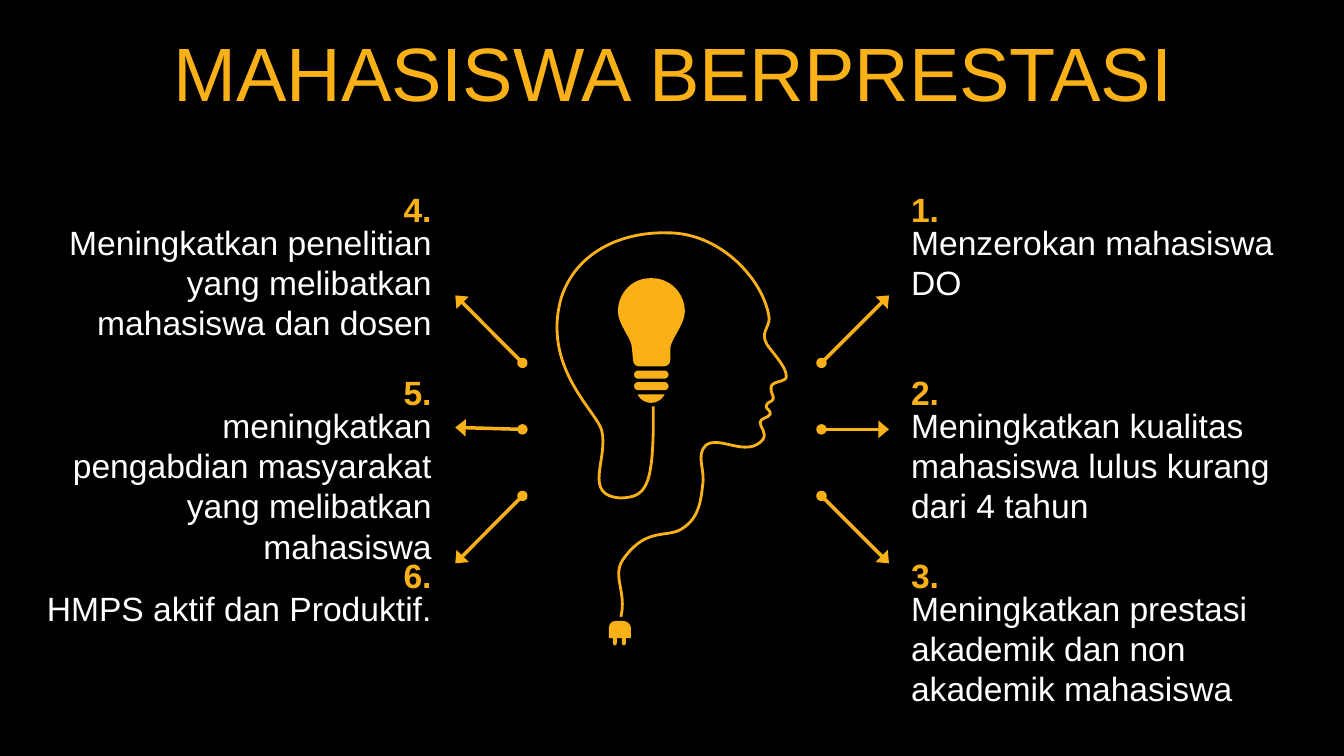
from dataclasses import dataclass

from lxml import etree
from pptx import Presentation
from pptx.dml.color import RGBColor
from pptx.enum.shapes import MSO_CONNECTOR, MSO_SHAPE
from pptx.enum.text import MSO_ANCHOR, MSO_AUTO_SIZE, PP_ALIGN
from pptx.oxml.ns import qn
from pptx.shapes.autoshape import Shape
from pptx.shapes.shapetree import GroupShapes
from pptx.slide import Slide
from pptx.util import Pt

STRAIGHT = MSO_CONNECTOR.STRAIGHT
ROUNDED, CHORD = MSO_SHAPE.ROUNDED_RECTANGLE, MSO_SHAPE.CHORD
TOP, MIDDLE = MSO_ANCHOR.TOP, MSO_ANCHOR.MIDDLE
LEFT, CENTER, RIGHT = PP_ALIGN.LEFT, PP_ALIGN.CENTER, PP_ALIGN.RIGHT
GROW = MSO_AUTO_SIZE.SHAPE_TO_FIT_TEXT

COLORS = {"background": "000000", "accent": "FAB117", "body": "FFFFFF"}
FONT = "Arial"
CALLOUT_WIDTH = 291.6
FIRST_ROW, ROW_STEP, BODY_OFFSET = 131.3, 130.8, 23.4
LINE_PITCH = 28.8

Point = tuple[float, float]
Box = tuple[float, float, float, float]
Segment = tuple[float, ...]


@dataclass(frozen=True)
class Callout:
    number: str
    body: str
    lines: int


@dataclass(frozen=True)
class Column:
    left: float
    align: PP_ALIGN
    callouts: tuple[Callout, ...]


@dataclass(frozen=True)
class Arrow:
    start: Point
    tip: Point


@dataclass(frozen=True)
class Outline:
    box: Box
    start: Point
    segments: tuple[Segment, ...]
    filled: bool = True


COLUMNS = (
    Column(643.7, LEFT, (
        Callout("1.", "Menzerokan mahasiswa DO", 2),
        Callout("2.", "Meningkatkan kualitas mahasiswa lulus kurang dari 4 tahun", 3),
        Callout("3.", "Meningkatkan prestasi akademik dan non akademik mahasiswa", 3),
    )),
    Column(23.7, RIGHT, (
        Callout("4.", "Meningkatkan penelitian yang melibatkan mahasiswa dan dosen", 3),
        Callout("5.", "meningkatkan pengabdian masyarakat yang melibatkan mahasiswa", 4),
        Callout("6.", "HMPS aktif dan Produktif.", 1),
    )),
)

ARROWS = (
    Arrow((586.8, 259.2), (635, 211)),
    Arrow((586.8, 306.7), (635, 306.7)),
    Arrow((586.8, 354.2), (635, 402.4)),
    Arrow((373.2, 259.2), (325.2, 211)),
    Arrow((373.2, 306.7), (325.2, 305.3)),
    Arrow((373.2, 354.2), (325.2, 402.4)),
)

HEAD = Outline((398.2, 166.3, 164.2, 274.3), (466.6, 290.2), (
    (467.3, 348.5, 461.5, 355, 443.5, 355.7),
    (415.4, 354.2, 434.9, 327.6, 429.8, 307.4),
    (426.2, 293.8, 386.6, 262.1, 401, 212.4),
    (411.8, 179.3, 445, 165.6, 475.9, 166.3),
    (515.5, 165.6, 546.5, 201.6, 549.4, 227.5),
    (549.4, 234, 542.9, 237.6, 547.9, 246.2),
    (553, 253.4, 562.3, 262.8, 561.6, 269.3),
    (561.6, 272.9, 550.8, 272.2, 550.8, 276.5),
    (550.1, 280.8, 553, 282.2, 552.2, 285.1),
    (551.5, 287.3, 547.9, 286.6, 547.2, 290.2),
    (547.2, 292.3, 550.8, 293, 550.1, 295.9),
    (549.4, 298.1, 542.9, 298.8, 542.9, 301.7),
    (542.9, 305.3, 547.9, 308.9, 545, 313.9),
    (533.5, 327.6, 513.4, 310.3, 504, 318.2),
    (496.8, 325.4, 504, 335.5, 501.8, 347),
    (500.4, 361.4, 497.5, 372.2, 485.3, 378.7),
    (474.5, 383.8, 460.8, 377.3, 445, 399.6),
    (437, 411.8, 447.8, 422.6, 443.5, 440.6),
), filled=False)

BULB = Outline((441.4, 198.7, 47.9, 63), (464.4, 198.7), (
    (465.1, 198.7), (465.8, 198.7),
    (478.8, 198.7, 489.2, 209.5, 489.2, 222.5),
    (489.2, 231.8, 479.5, 241.9, 478.8, 248.4),
    (478.8, 257),
    (478.8, 259.9, 476.6, 261.7, 473.8, 261.7),
    (465.5, 261.7), (465.1, 261.7), (456.5, 261.7),
    (454.3, 261.7, 452.2, 259.9, 452.2, 257),
    (451.4, 248.4),
    (451.4, 241.9, 441.4, 231.8, 441.4, 222.5),
    (441.4, 209.5, 451.4, 198.7, 464.4, 198.7),
))

PLUG = Outline((434.9, 443.5, 15.8, 17.5), (439.9, 443.5), (
    (445, 443.5),
    (447.8, 443.5, 450.7, 445.7, 450.7, 448.6),
    (450.7, 455.8), (447.1, 455.8), (447.1, 459.4),
    (447.1, 460.1, 446.4, 461, 445.9, 461), (445.5, 461),
    (444.9, 461, 444.2, 460.1, 444.2, 459.4),
    (444.2, 455.8), (440.6, 455.8), (440.6, 459.4),
    (440.6, 460.1, 439.9, 461, 439.4, 461), (439, 461),
    (438.4, 461, 437.8, 460.1, 437.8, 459.4),
    (437.8, 455.8), (434.9, 455.8), (434.9, 448.6),
    (434.9, 445.7, 437, 443.5, 439.9, 443.5),
))


def color(name: str) -> RGBColor:
    return RGBColor.from_string(COLORS[name])


def add_text(shapes: GroupShapes, box: Box, text: str, size: float, tint: str,
             align: PP_ALIGN, anchor: MSO_ANCHOR, bold: bool = False) -> Shape:
    label = shapes.add_textbox(*map(Pt, box))
    label.text_frame.word_wrap = True
    label.text_frame.vertical_anchor = anchor
    paragraph = label.text_frame.paragraphs[0]
    paragraph.alignment = align
    run = paragraph.add_run()
    run.text = text
    run.font.name, run.font.size, run.font.bold = FONT, Pt(size), bold
    run.font.color.rgb = color(tint)
    return label


def add_callout(slide: Slide, column: Column, row: int, callout: Callout) -> None:
    shapes = slide.shapes.add_group_shape().shapes
    top = FIRST_ROW + row * ROW_STEP
    number = add_text(shapes, (column.left, top, CALLOUT_WIDTH, 36), callout.number,
                      24, "accent", column.align, MIDDLE, bold=True)
    body_box = (column.left, top + BODY_OFFSET, CALLOUT_WIDTH, callout.lines * LINE_PITCH + 7.2)
    body = add_text(shapes, body_box, callout.body, 24, "body", column.align, TOP)
    body.text_frame.paragraphs[0].line_spacing = Pt(LINE_PITCH)
    for part in (number, body):
        part.text_frame.auto_size = GROW


def add_arrow(slide: Slide, arrow: Arrow) -> None:
    link = slide.shapes.add_connector(STRAIGHT, *map(Pt, arrow.start + arrow.tip))
    link.line.color.rgb = color("accent")
    link.line.width = Pt(2.5)
    stroke = link.line._get_or_add_ln()
    etree.SubElement(stroke, qn("a:headEnd"), type="oval")
    etree.SubElement(stroke, qn("a:tailEnd"), type="triangle", w="lg", len="med")
    etree.SubElement(link._element.spPr, qn("a:effectLst"))


def paint(shape: Shape) -> None:
    shape.shadow.inherit = False
    shape.fill.solid()
    shape.fill.fore_color.rgb = color("accent")
    shape.line.fill.background()


def add_outline(shapes: GroupShapes, outline: Outline) -> None:
    left, top, width, height = outline.box
    builder = shapes.build_freeform(Pt(left), Pt(top))
    builder.add_line_segments([(Pt(left + width), Pt(top + height))], close=False)
    shape = builder.convert_to_shape()
    route = next(shape._element.iter(qn("a:path")))
    for step in list(route):
        route.remove(step)

    def add_step(tag: str, values: Segment) -> None:
        step = etree.SubElement(route, qn(tag))
        for x, y in zip(values[::2], values[1::2]):
            etree.SubElement(step, qn("a:pt"), x=str(int(Pt(x - left))), y=str(int(Pt(y - top))))

    add_step("a:moveTo", outline.start)
    for segment in outline.segments:
        add_step("a:lnTo" if len(segment) == 2 else "a:cubicBezTo", segment)
    paint(shape)
    if outline.filled:
        etree.SubElement(route, qn("a:close"))
    else:
        shape.fill.background()
        shape.line.color.rgb = color("accent")
        shape.line.width = Pt(2)


def add_idea_head(slide: Slide) -> None:
    shapes = slide.shapes.add_group_shape().shapes
    for outline in (HEAD, BULB):
        add_outline(shapes, outline)
    for top in (264.7, 272.9):
        thread = shapes.add_shape(ROUNDED, Pt(452.9), Pt(top), Pt(24.7), Pt(5.8))
        thread.adjustments[0] = 0.5
        paint(thread)
    cap = shapes.add_shape(CHORD, Pt(454.3), Pt(266.2), Pt(21.6), Pt(21.6))
    cap.adjustments[0], cap.adjustments[1] = 15.77, 92.52
    paint(cap)
    add_outline(shapes, PLUG)


def main() -> None:
    deck = Presentation()
    deck.slide_width, deck.slide_height = Pt(960), Pt(540)
    slide = deck.slides.add_slide(deck.slide_layouts[6])
    slide.background.fill.solid()
    slide.background.fill.fore_color.rgb = color("background")
    title = add_text(slide.shapes, (25.2, 26.6, 911.5, 56.9), "MAHASISWA BERPRESTASI",
                     54, "accent", CENTER, MIDDLE)
    title.text_frame.paragraphs[0].line_spacing = 0.9
    title.text_frame.paragraphs[0].space_before = Pt(10)
    for arrow in ARROWS:
        add_arrow(slide, arrow)
    for column in COLUMNS:
        for row, callout in enumerate(column.callouts):
            add_callout(slide, column, row, callout)
    add_idea_head(slide)
    deck.save("out.pptx")


if __name__ == "__main__":
    main()
